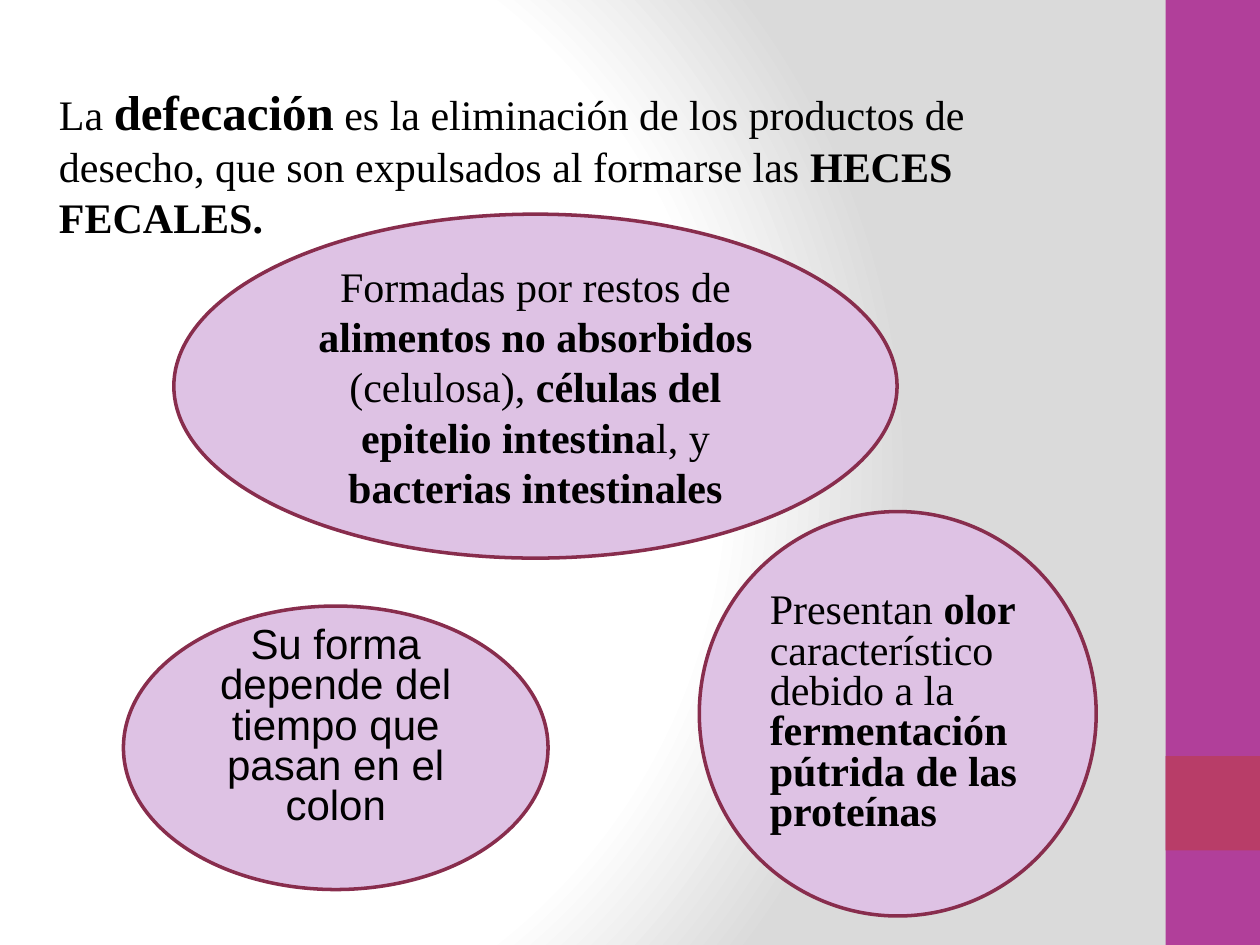
from lxml import etree
from pptx import Presentation
from pptx import util as u
from pptx.dml.color import RGBColor
from pptx.enum import shapes, text
from pptx.oxml import ns

COLORS = {
    "white": "FFFFFF", "gray": "DADADA", "band": "B13F9A", "accent": "B83D68",
    "bubble": "DEC2E4", "outline": "882D4D", "ink": "000000",
}
SERIF, SANS = "Times New Roman", "Arial"


def color(name):
    return RGBColor.from_string(COLORS[name])


def add_runs(paragraph, runs, font=SERIF):
    """Each run is (wording, bold) or (wording, bold, size)."""
    for wording, bold, *size in runs:
        run = paragraph.add_run()
        run.text = wording
        run.font.name = font
        run.font.size = u.Pt(size[0] if size else 24)
        run.font.bold = bold
        run.font.color.rgb = color("ink")


def paint_background(slide):
    """Radial gradient, white at the left and gray towards the right."""
    fill = slide.background.fill
    fill.gradient()
    gradient = slide.background._cSld.find(".//" + ns.qn("a:gradFill"))
    for child in list(gradient):
        gradient.remove(child)
    stops = etree.SubElement(gradient, ns.qn("a:gsLst"))
    for position, name in ((0, "white"), (75, "white"), (100, "gray")):
        stop = etree.SubElement(stops, ns.qn("a:gs"), pos=str(position * 1000))
        etree.SubElement(stop, ns.qn("a:srgbClr"), val=COLORS[name])
    radial = etree.SubElement(gradient, ns.qn("a:path"), path="circle")
    etree.SubElement(radial, ns.qn("a:fillToRect"),
                     l="20000", t="50000", r="100000", b="50000")


def add_filled(slide, preset, box, fill):
    shape = slide.shapes.add_shape(preset, *map(u.Inches, box))
    shape.shadow.inherit = False
    shape.fill.solid()
    shape.fill.fore_color.rgb = color(fill)
    shape.line.fill.background()
    return shape


def add_side_band(slide, box):
    left, top, width, height = box
    add_filled(slide, shapes.MSO_SHAPE.RECTANGLE, box, "band")
    square = (left, top + height - 2 * width, width, width)
    add_filled(slide, shapes.MSO_SHAPE.RECTANGLE, square, "accent")


def add_definition(slide, box, paragraphs):
    definition = slide.shapes.add_textbox(*map(u.Inches, box)).text_frame
    definition.word_wrap = True
    definition.auto_size = text.MSO_AUTO_SIZE.SHAPE_TO_FIT_TEXT
    for i, runs in enumerate(paragraphs):
        paragraph = definition.add_paragraph() if i else definition.paragraphs[0]
        add_runs(paragraph, runs)


def add_bubble(slide, box, runs, font=SERIF, align=text.PP_ALIGN.CENTER,
               spacing=1.0, bottom=0.05):
    bubble = add_filled(slide, shapes.MSO_SHAPE.OVAL, box, "bubble")
    bubble.line.color.rgb = color("outline")
    bubble.line.width = u.Pt(2)
    frame = bubble.text_frame
    frame.word_wrap = True
    frame.vertical_anchor = text.MSO_ANCHOR.MIDDLE
    frame.margin_bottom = u.Inches(bottom)
    paragraph = frame.paragraphs[0]
    paragraph.alignment = align
    paragraph.line_spacing = spacing
    add_runs(paragraph, runs, font)


def main():
    prs = Presentation()
    prs.slide_width, prs.slide_height = u.Inches(10), u.Inches(7.5)
    slide = prs.slides.add_slide(prs.slide_layouts[6])

    # Backdrop
    paint_background(slide)
    add_side_band(slide, (9.25, 0, 0.75, 7.5))

    # Definition
    add_definition(slide, (0.37, 0.6, 7.96, 1.38), [
        [("La ", False), ("defecación", True, 28),
         (" es la eliminación de los productos de desecho, "
          "que son expulsados al formarse las ", False),
         ("HECES", True)],
        [("FECALES.", True)],
    ])

    # Composition, smell and form
    add_bubble(slide, (1.38, 1.7, 5.74, 2.73), [
        ("Formadas por restos de ", False), ("alimentos no absorbidos", True),
        (" (celulosa), ", False), ("células del epitelio intestina", True),
        ("l, y ", False), ("bacterias intestinales", True),
    ])
    add_bubble(slide, (5.55, 4.06, 3.15, 3.21), [
        ("Presentan ", False), ("olor", True),
        (" característico debido a la ", False),
        ("fermentación pútrida de las proteínas", True),
    ], align=text.PP_ALIGN.LEFT, spacing=0.8)
    add_bubble(slide, (0.98, 4.81, 3.37, 2.25), [
        ("Su forma depende del tiempo que pasan en el colon", False),
    ], font=SANS, spacing=0.8, bottom=0.36)

    prs.save("out.pptx")


if __name__ == "__main__":
    main()
